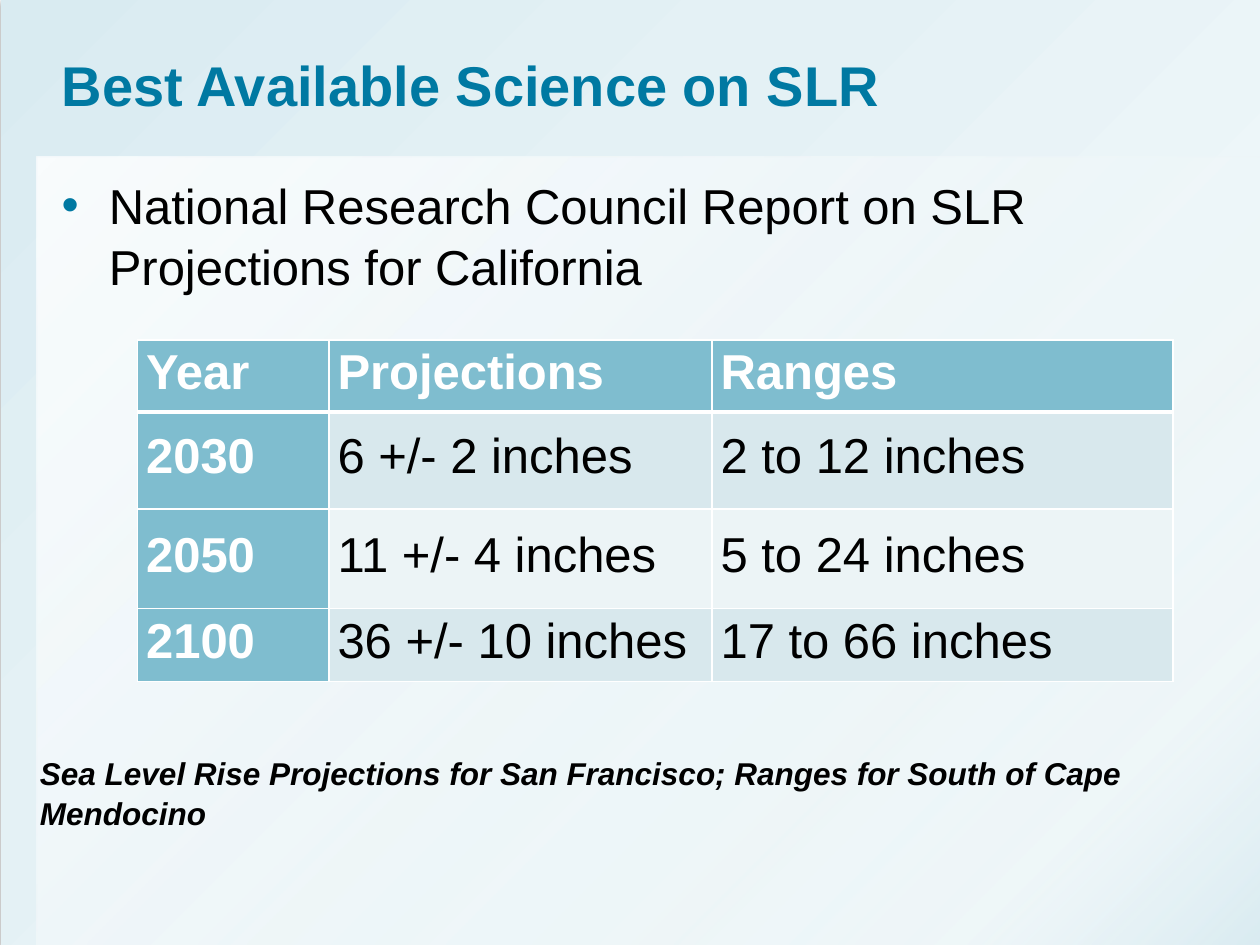
from dataclasses import dataclass
from typing import NamedTuple

from lxml.etree import SubElement
from pptx import Presentation
from pptx.dml.color import RGBColor
from pptx.enum.shapes import MSO_SHAPE
from pptx.enum.text import MSO_ANCHOR, MSO_AUTO_SIZE, PP_ALIGN
from pptx.oxml import parse_xml
from pptx.oxml.ns import nsdecls, qn
from pptx.util import Pt


@dataclass(frozen=True)
class Theme:
    font: str = "Arial"
    accent: str = "0079A2"
    ink: str = "000000"
    white: str = "FFFFFF"
    header: str = "7FBDCF"
    odd_band: str = "D8E8ED"
    even_band: str = "ECF4F6"
    title_size: float = 32
    body_size: float = 28
    note_size: float = 18
    line_spacing: float = 1.05


class Box(NamedTuple):
    left: float
    top: float
    width: float
    height: float


class Stop(NamedTuple):
    position: int
    color: str
    opacity: int = 100


class Panel(NamedTuple):
    box: Box
    angle: int
    stops: tuple[Stop, ...]
    shadow: bool = False


THEME = Theme()
BACKDROP = Panel(Box(0.72, 0, 720, 540), 225,
                 (Stop(0, "F9FCFD"), Stop(63, "E4F1F5"), Stop(100, "D9EBF1")), True)
CONTENT_PANEL = Panel(Box(20.9, 89.3, 700.5, 450.7), 45,
                      (Stop(0, "F9FCFD"), Stop(85, "EAF4F7", 58), Stop(100, "D9EBF1")))
TITLE_BOX = Box(28, 21.6, 666, 67.7)
BODY_BOX = Box(28, 92.9, 648, 371.5)
NOTE_BOX = Box(15.8, 426.2, 691.2, 51)
TABLE_BOX = Box(78.5, 194.4, 591.8, 195.1)
COLUMN_WIDTHS = (109.4, 218.9, 263.5)
ROW_HEIGHTS = (41, 55.4, 56.9, 41.8)
PROJECTIONS = (
    ("Year", "Projections", "Ranges"),
    ("2030", "6 +/- 2 inches", "2 to 12 inches"),
    ("2050", "11 +/- 4 inches", "5 to 24 inches"),
    ("2100", "36 +/- 10 inches", "17 to 66 inches"),
)


def place(shape, box: Box) -> None:
    for side, length in box._asdict().items():
        setattr(shape, side, Pt(length))


def write(frame, text: str, size: float, color: str, **styles: bool):
    frame.text = text
    paragraph = frame.paragraphs[0]
    paragraph.alignment = PP_ALIGN.LEFT
    font = paragraph.runs[0].font
    font.color.rgb = RGBColor.from_string(color)
    for name, value in {"name": THEME.font, "size": Pt(size), **styles}.items():
        setattr(font, name, value)
    return paragraph


def set_up_frame(frame, top_inset: float) -> None:
    settings = {
        "word_wrap": True,
        "auto_size": MSO_AUTO_SIZE.NONE,
        "vertical_anchor": MSO_ANCHOR.TOP,
        "margin_top": Pt(top_inset),
    }
    for name, value in settings.items():
        setattr(frame, name, value)


def add_panel(slide, panel: Panel, depth: int) -> None:
    """Draw a gradient panel and move it to the layout, behind the slide content."""
    shape = slide.shapes.add_shape(MSO_SHAPE.RECTANGLE, *map(Pt, panel.box))
    shape.line.fill.background()
    shape.fill.background()
    shape.shadow.inherit = False
    properties = shape.element.spPr
    stops = "".join(
        f'<a:gs pos="{stop.position * 1000}"><a:srgbClr val="{stop.color}">'
        f'<a:alpha val="{stop.opacity * 1000}"/></a:srgbClr></a:gs>'
        for stop in panel.stops
    )
    gradient = parse_xml(
        f'<a:gradFill {nsdecls("a")} rotWithShape="1"><a:gsLst>{stops}</a:gsLst>'
        f'<a:lin ang="{panel.angle * 60000}" scaled="0"/></a:gradFill>'
    )
    properties.replace(properties.find(qn("a:noFill")), gradient)
    if panel.shadow:
        properties.find(qn("a:effectLst")).append(parse_xml(
            f'<a:outerShdw {nsdecls("a")} blurRad="{Pt(3.1)}" dist="{Pt(1.8)}" '
            f'dir="5400000" rotWithShape="0"><a:srgbClr val="{THEME.ink}">'
            '<a:alpha val="35000"/></a:srgbClr></a:outerShdw>'
        ))
    slide.slide_layout.shapes.element.insert(2 + depth, shape.element)


def add_bullet(paragraph) -> None:
    properties = paragraph._p.get_or_add_pPr()
    properties.set("marL", str(Pt(27)))
    properties.set("indent", str(-Pt(27)))
    bullet_color = SubElement(properties, qn("a:buClr"))
    SubElement(bullet_color, qn("a:srgbClr"), val=THEME.accent)
    SubElement(properties, qn("a:buFont"), typeface=THEME.font)
    SubElement(properties, qn("a:buChar"), char="•")


def add_borders(cell, row: int) -> None:
    """Rule the cell in white, with a heavier line under the header row."""
    widths = {"L": 1, "R": 1, "T": 3 if row == 1 else 1, "B": 3 if row == 0 else 1}
    properties = cell._tc.get_or_add_tcPr()
    for side, width in widths.items():
        line = SubElement(properties, qn(f"a:ln{side}"), w=str(Pt(width)))
        SubElement(SubElement(line, qn("a:solidFill")), qn("a:srgbClr"), val=THEME.white)


def add_projections_table(slide) -> None:
    table = slide.shapes.add_table(
        len(ROW_HEIGHTS), len(COLUMN_WIDTHS), *map(Pt, TABLE_BOX)
    ).table
    for column, width in zip(table.columns, COLUMN_WIDTHS):
        column.width = Pt(width)
    cell_settings = {
        "vertical_anchor": MSO_ANCHOR.MIDDLE,
        "margin_left": Pt(5), "margin_right": Pt(5),
        "margin_top": Pt(0), "margin_bottom": Pt(4),
    }
    for row, (height, entries) in enumerate(zip(ROW_HEIGHTS, PROJECTIONS)):
        table.rows[row].height = Pt(height)
        band = THEME.odd_band if row % 2 else THEME.even_band
        for column, entry in enumerate(entries):
            heading = row == 0 or column == 0
            cell = table.cell(row, column)
            for name, value in cell_settings.items():
                setattr(cell, name, value)
            add_borders(cell, row)
            cell.fill.solid()
            cell.fill.fore_color.rgb = RGBColor.from_string(THEME.header if heading else band)
            write(cell.text_frame, entry, THEME.body_size,
                  THEME.white if heading else THEME.ink, bold=heading)


def main() -> None:
    presentation = Presentation()
    presentation.slide_width, presentation.slide_height = Pt(720), Pt(540)
    slide = presentation.slides.add_slide(presentation.slide_layouts[1])
    for depth, panel in enumerate((BACKDROP, CONTENT_PANEL)):
        add_panel(slide, panel, depth)

    title, body = slide.shapes.title, slide.placeholders[1]
    place(title, TITLE_BOX)
    set_up_frame(title.text_frame, 5.5)
    heading = write(title.text_frame, "Best Available Science on SLR",
                    THEME.title_size, THEME.accent, bold=True)

    place(body, BODY_BOX)
    set_up_frame(body.text_frame, 5.5)
    report = write(body.text_frame,
                   "National Research Council Report on SLR Projections for California",
                   THEME.body_size, THEME.ink)
    add_bullet(report)

    add_projections_table(slide)

    note = slide.shapes.add_textbox(*map(Pt, NOTE_BOX))
    set_up_frame(note.text_frame, 3.6)
    caption = write(
        note.text_frame,
        "Sea Level Rise Projections for San Francisco; Ranges for South of Cape Mendocino",
        THEME.note_size, THEME.ink, bold=True, italic=True)

    for paragraph in (heading, report, caption):
        paragraph.line_spacing = THEME.line_spacing
        paragraph.space_before = Pt(0)

    presentation.save("out.pptx")


if __name__ == "__main__":
    main()
